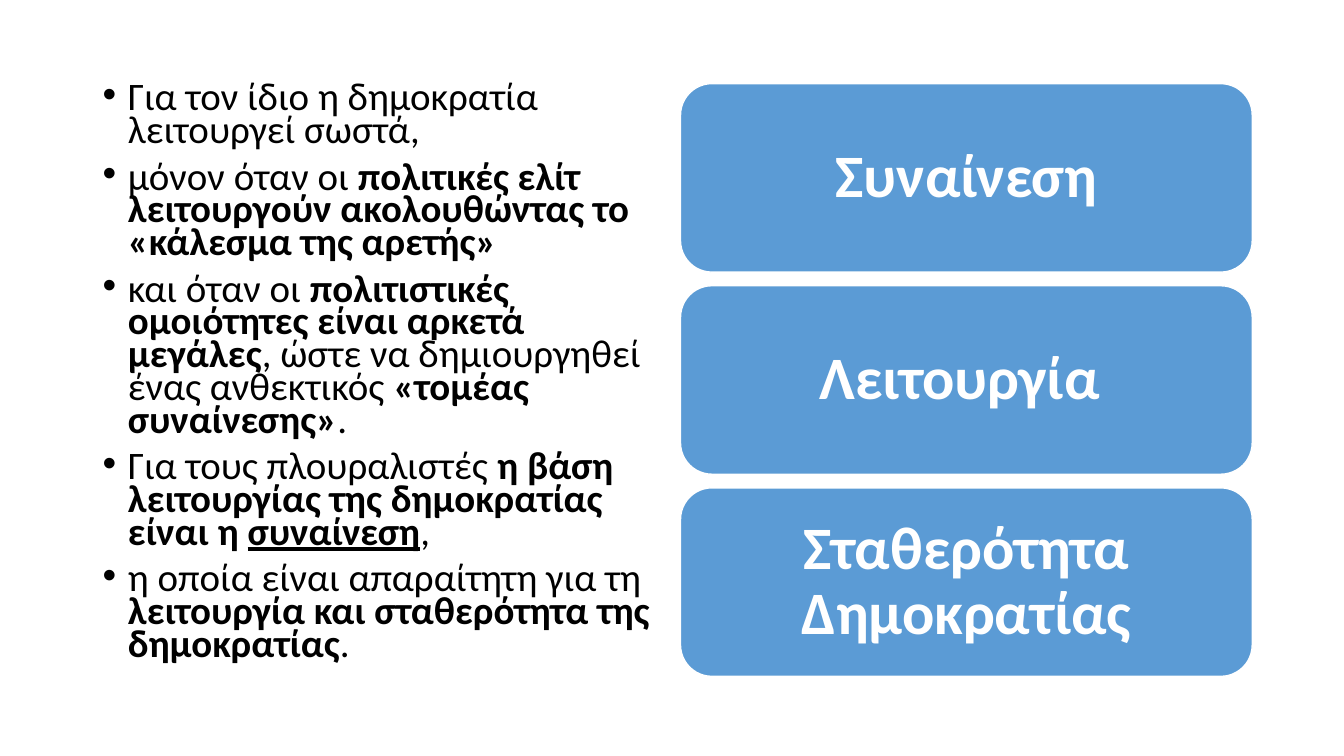
from lxml import etree
from pptx import Presentation
from pptx.dml.color import RGBColor
from pptx.enum.shapes import MSO_SHAPE
from pptx.enum.text import MSO_ANCHOR, PP_ALIGN
from pptx.oxml.ns import qn
from pptx.util import Inches, Pt

ROUND = MSO_SHAPE.ROUNDED_RECTANGLE
MIDDLE = MSO_ANCHOR.MIDDLE
CENTER = PP_ALIGN.CENTER
BLACK = RGBColor(0x00, 0x00, 0x00)
WHITE = RGBColor(0xFF, 0xFF, 0xFF)
BLUE = RGBColor(0x5B, 0x9B, 0xD5)

LEFT, WIDE = 0.92, 5.67
RIGHT = 6.75
TOP, STEP, HIGH = 0.83, 2.005, 1.87
PAD = Inches(0.18)

POINTS = [
    [("Για τον ίδιο η δημοκρατία λειτουργεί σωστά,", "")],
    [("μόνον όταν οι ", ""),
     ("πολιτικές ελίτ λειτουργούν ακολουθώντας το «κάλεσμα της αρετής»", "b")],
    [("και όταν οι ", ""),
     ("πολιτιστικές ομοιότητες είναι αρκετά μεγάλες", "b"),
     (", ώστε να δημιουργηθεί ένας ανθεκτικός ", ""),
     ("«τομέας συναίνεσης»", "b"),
     (".", "")],
    [("Για τους πλουραλιστές ", ""),
     ("η βάση λειτουργίας της δημοκρατίας είναι η ", "b"),
     ("συναίνεση", "bu"),
     (",", "")],
    [("η οποία είναι απαραίτητη για τη ", ""),
     ("λειτουργία και σταθερότητα της δημοκρατίας", "b"),
     (".", "")],
]
CARDS = ["Συναίνεση", "Λειτουργία ", "Σταθερότητα Δημοκρατίας"]


def write(par, text, size, color, bold=False, under=False):
    run = par.add_run()
    run.text = text
    font = run.font
    font.name = "Calibri"
    font.size = Pt(size)
    font.color.rgb = color
    font.bold = bold
    font.underline = under


deck = Presentation()
deck.slide_width = Inches(13.33)
deck.slide_height = Inches(7.5)
slide = deck.slides.add_slide(deck.slide_layouts[6])

box = slide.shapes.add_textbox(
    Inches(LEFT), Inches(0.79), Inches(WIDE), Inches(5.97))
frame = box.text_frame
frame.word_wrap = True
for i, parts in enumerate(POINTS):
    par = frame.add_paragraph() if i else frame.paragraphs[0]
    par.line_spacing = 0.7
    par.space_before = Pt(10)
    props = par._p.get_or_add_pPr()
    props.set("marL", str(Inches(0.25)))
    props.set("indent", str(-Inches(0.25)))
    etree.SubElement(props, qn("a:buFont")).set("typeface", "Arial")
    etree.SubElement(props, qn("a:buChar")).set("char", "•")
    for text, style in parts:
        write(par, text, size=27.8, color=BLACK,
              bold="b" in style, under="u" in style)

for i, text in enumerate(CARDS):
    card = slide.shapes.add_shape(
        ROUND, Inches(RIGHT), Inches(TOP + i * STEP), Inches(WIDE), Inches(HIGH))
    card.shadow.inherit = False
    card.fill.solid()
    card.fill.fore_color.rgb = BLUE
    card.line.color.rgb = WHITE
    card.line.width = Pt(1)
    frame = card.text_frame
    frame.word_wrap = True
    frame.vertical_anchor = MIDDLE
    frame.margin_left = frame.margin_right = PAD
    frame.margin_top = frame.margin_bottom = PAD
    par = frame.paragraphs[0]
    par.alignment = CENTER
    par.line_spacing = 0.9
    write(par, text, size=43, color=WHITE, bold=True)

deck.save("out.pptx")
